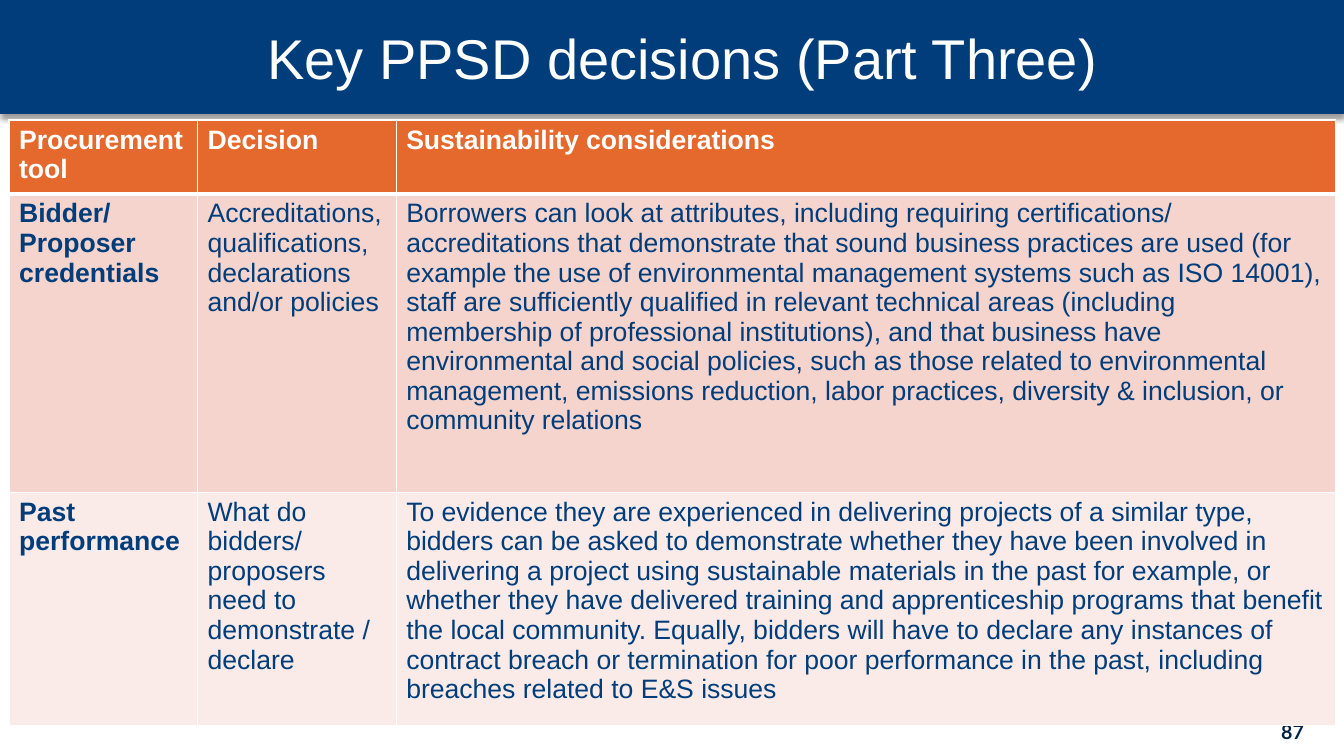
from dataclasses import dataclass

from lxml.etree import SubElement
from pptx import Presentation
from pptx.dml.color import RGBColor
from pptx.enum.text import MSO_ANCHOR, MSO_AUTO_SIZE, PP_ALIGN
from pptx.oxml.ns import qn
from pptx.util import Inches, Pt


@dataclass(frozen=True)
class Theme:
    navy: str = "003D7A"
    orange: str = "E5682D"
    white: str = "FFFFFF"
    number_ink: str = "002345"
    shadow: str = "000000"
    font: str = "Arial"
    number_font: str = "Lato"
    title_size: float = 40
    table_size: float = 19
    number_size: float = 14


@dataclass(frozen=True)
class TableRow:
    cells: tuple[str, str, str]
    height: float
    fill: str
    ink: str
    bold_columns: tuple[int, ...]
    top_line: float
    bottom_line: float


THEME = Theme()
COLUMN_WIDTHS = (1.87, 1.97, 9.32)
ROWS = (
    TableRow(
        ("Procurement tool", "Decision", "Sustainability considerations"),
        0.73, THEME.orange, THEME.white, (0, 1, 2), 1, 3,
    ),
    TableRow(
        (
            "Bidder/\nProposer credentials",
            "Accreditations, qualifications, declarations and/or policies",
            "Borrowers can look at attributes, including requiring certifications/ "
            "accreditations that demonstrate that sound business practices are used "
            "(for example the use of environmental management systems such as ISO 14001), "
            "staff are sufficiently qualified in relevant technical areas (including "
            "membership of professional institutions), and that business have "
            "environmental and social policies, such as those related to environmental "
            "management, emissions reduction, labor practices, diversity & inclusion, "
            "or community relations",
        ),
        2.96, "F5D4CD", THEME.navy, (0,), 3, 1,
    ),
    TableRow(
        (
            "Past performance",
            "What do bidders/ proposers need to demonstrate / declare",
            "To evidence they are experienced in delivering projects of a similar type, "
            "bidders can be asked to demonstrate whether they have been involved in "
            "delivering a project using sustainable materials in the past for example, "
            "or whether they have delivered training and apprenticeship programs that "
            "benefit the local community. Equally, bidders will have to declare any "
            "instances of contract breach or termination for poor performance in the "
            "past, including breaches related to E&S issues",
        ),
        2.31, "FAEBE8", THEME.navy, (0,), 1, 1,
    ),
)


def write(frame, text: str, *, size: float, color: str, font: str = THEME.font,
          bold: bool = False, align=PP_ALIGN.LEFT) -> None:
    frame.word_wrap = True
    frame.text = text
    for para in frame.paragraphs:
        para.alignment = align
        for span in para.runs:
            span.font.name = font
            span.font.size = Pt(size)
            span.font.bold = bold
            span.font.color.rgb = RGBColor.from_string(color)


def set_margins(frame, left: float, top: float, right: float, bottom: float) -> None:
    frame.margin_left, frame.margin_top = Inches(left), Inches(top)
    frame.margin_right, frame.margin_bottom = Inches(right), Inches(bottom)


def add_shadow(box) -> None:
    effects = SubElement(box._element.spPr, qn("a:effectLst"))
    shadow = SubElement(effects, qn("a:outerShdw"), blurRad=str(Pt(4)),
                        dist=str(Pt(3)), dir="5400000", rotWithShape="0")
    color = SubElement(shadow, qn("a:srgbClr"), val=THEME.shadow)
    SubElement(color, qn("a:alpha"), val="40000")


def add_borders(cell, row: TableRow) -> None:
    properties = cell._tc.get_or_add_tcPr()
    widths = {"L": 1, "R": 1, "T": row.top_line, "B": row.bottom_line}
    for side, width in widths.items():
        line = SubElement(properties, qn(f"a:ln{side}"), w=str(Pt(width)))
        fill = SubElement(line, qn("a:solidFill"))
        SubElement(fill, qn("a:srgbClr"), val=THEME.white)


def add_title(page, text: str) -> None:
    box = page.shapes.title
    box.left, box.top = Inches(0), Inches(0)
    box.width, box.height = Inches(13.33), Inches(1.13)
    box.fill.solid()
    box.fill.fore_color.rgb = RGBColor.from_string(THEME.navy)
    box.line.fill.background()
    add_shadow(box)
    frame = box.text_frame
    frame.auto_size = MSO_AUTO_SIZE.NONE
    frame.vertical_anchor = MSO_ANCHOR.MIDDLE
    set_margins(frame, 0.3, 0.05, 0.1, 0.05)
    write(frame, text, size=THEME.title_size, color=THEME.white, align=PP_ALIGN.CENTER)


def add_page_number(page, text: str) -> None:
    box = page.shapes.add_textbox(Inches(12.49), Inches(7.09), Inches(0.66), Inches(0.3))
    frame = box.text_frame
    frame.vertical_anchor = MSO_ANCHOR.MIDDLE
    set_margins(frame, 0, 0.04, 0, 0)
    write(frame, text, size=THEME.number_size, color=THEME.number_ink,
          font=THEME.number_font, bold=True, align=PP_ALIGN.CENTER)


def add_decision_table(page, rows: tuple[TableRow, ...]) -> None:
    table = page.shapes.add_table(
        len(rows), len(COLUMN_WIDTHS), Inches(0.09), Inches(1.19),
        Inches(sum(COLUMN_WIDTHS)), Inches(sum(row.height for row in rows)),
    ).table
    for column, width in zip(table.columns, COLUMN_WIDTHS):
        column.width = Inches(width)
    for row_index, row in enumerate(rows):
        table.rows[row_index].height = Inches(row.height)
        for column_index, text in enumerate(row.cells):
            cell = table.cell(row_index, column_index)
            add_borders(cell, row)
            cell.fill.solid()
            cell.fill.fore_color.rgb = RGBColor.from_string(row.fill)
            write(cell.text_frame, text, size=THEME.table_size, color=row.ink,
                  bold=column_index in row.bold_columns)


def main() -> None:
    deck = Presentation()
    deck.slide_width, deck.slide_height = Inches(13.33), Inches(7.5)
    page = deck.slides.add_slide(deck.slide_layouts.get_by_name("Title Only"))
    add_page_number(page, "87")
    add_title(page, "Key PPSD decisions (Part Three)")
    add_decision_table(page, ROWS)
    deck.save("out.pptx")


if __name__ == "__main__":
    main()
